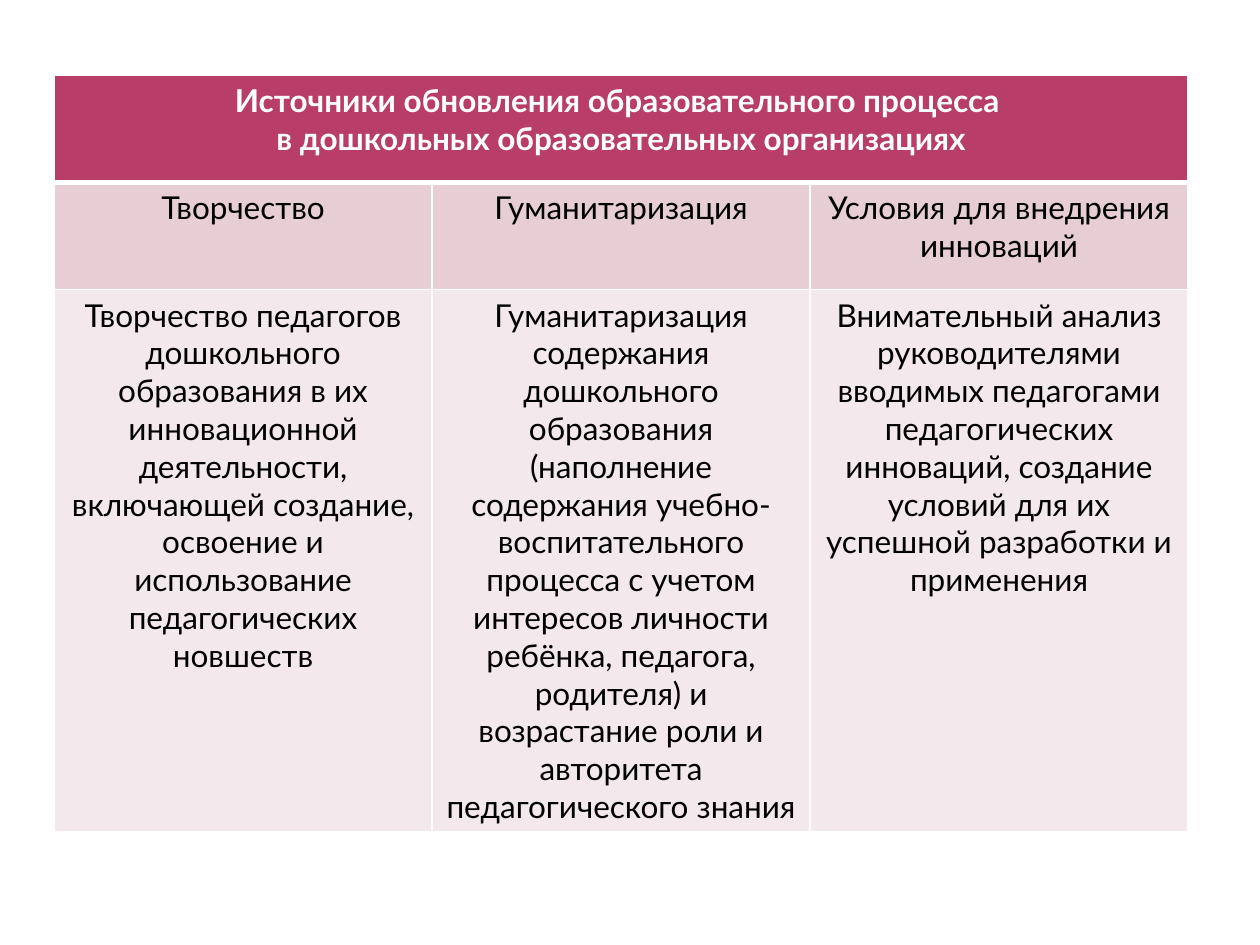
"""Build a slide with a table on the sources of renewal in preschool education."""
from dataclasses import dataclass

from lxml import etree
from pptx import Presentation
from pptx import util as u
from pptx.dml.color import RGBColor
from pptx.enum import text
from pptx.oxml import ns

WHITE = RGBColor(0xFF, 0xFF, 0xFF)
BLACK = RGBColor(0x00, 0x00, 0x00)
RASPBERRY = RGBColor(0xB8, 0x3D, 0x68)
ROSE = RGBColor(0xE6, 0xCE, 0xD4)
PALE_ROSE = RGBColor(0xF3, 0xE8, 0xEB)

COLUMN_COUNT = 3
COLUMN_WIDTH = u.Cm(7.62)
THIN, THICK = u.Pt(1), u.Pt(3)
FONT_FORMAT = {"name": "Lato", "size": u.Pt(18)}


@dataclass(frozen=True)
class TableRow:
    """One row of the table with its look."""

    cells: tuple[str, ...]
    height: u.Length
    fill: RGBColor
    color: RGBColor = BLACK
    bold: bool = False
    top: u.Length = THIN
    bottom: u.Length = THIN


ROWS = (
    TableRow(
        ("Источники обновления образовательного процесса \n"
         "в дошкольных образовательных организациях",),
        u.Cm(2.16), RASPBERRY, WHITE, bold=True, bottom=THICK,
    ),
    TableRow(
        ("Творчество", "Гуманитаризация", "Условия для внедрения инноваций"),
        u.Cm(2.16), ROSE, top=THICK,
    ),
    TableRow(
        ("Творчество педагогов дошкольного образования в их инновационной "
         "деятельности, включающей создание, освоение и использование "
         "педагогических новшеств",
         "Гуманитаризация содержания дошкольного образования (наполнение "
         "содержания учебно-воспитательного процесса с учетом интересов "
         "личности ребёнка, педагога, родителя) и возрастание роли и "
         "авторитета педагогического знания",
         "Внимательный анализ руководителями вводимых педагогами "
         "педагогических инноваций, создание условий для их успешной "
         "разработки и применения"),
        u.Cm(10.49), PALE_ROSE,
    ),
)


def set_borders(cell, row: TableRow) -> None:
    """Draw white lines on the four sides of a cell."""
    properties = cell._tc.get_or_add_tcPr()
    widths = {"lnL": THIN, "lnR": THIN, "lnT": row.top, "lnB": row.bottom}
    for side, width in widths.items():
        line = etree.SubElement(properties, ns.qn(f"a:{side}"), w=str(int(width)))
        fill = etree.SubElement(line, ns.qn("a:solidFill"))
        etree.SubElement(fill, ns.qn("a:srgbClr"), val=str(WHITE))


def write_text(cell, content: str, row: TableRow) -> None:
    """Write centred text in the font of its row."""
    cell.text = content
    for paragraph in cell.text_frame.paragraphs:
        paragraph.alignment = text.PP_ALIGN.CENTER
        for run in paragraph.runs:
            for name, value in {**FONT_FORMAT, "bold": row.bold}.items():
                setattr(run.font, name, value)
            run.font.color.rgb = row.color


def draw_table(slide, rows: tuple[TableRow, ...]) -> None:
    """Add the table, merging a row that holds a single text."""
    table = slide.shapes.add_table(
        len(rows), COLUMN_COUNT, u.Cm(1.09), u.Cm(1.52),
        COLUMN_WIDTH * COLUMN_COUNT, sum(row.height for row in rows),
    ).table
    for column in table.columns:
        column.width = COLUMN_WIDTH
    for index, row in enumerate(rows):
        table.rows[index].height = row.height
        cells = [table.cell(index, column) for column in range(COLUMN_COUNT)]
        if len(row.cells) == 1:
            cells[0].merge(cells[-1])
        for cell in cells:
            set_borders(cell, row)
            cell.fill.solid()
            cell.fill.fore_color.rgb = row.fill
        for cell, content in zip(cells, row.cells):
            write_text(cell, content, row)


def main() -> None:
    """Create the presentation and save it."""
    presentation = Presentation()
    presentation.slide_width = u.Cm(25.4)
    presentation.slide_height = u.Cm(19.05)
    slide = presentation.slides.add_slide(presentation.slide_layouts[6])
    draw_table(slide, ROWS)
    presentation.save("out.pptx")


if __name__ == "__main__":
    main()
